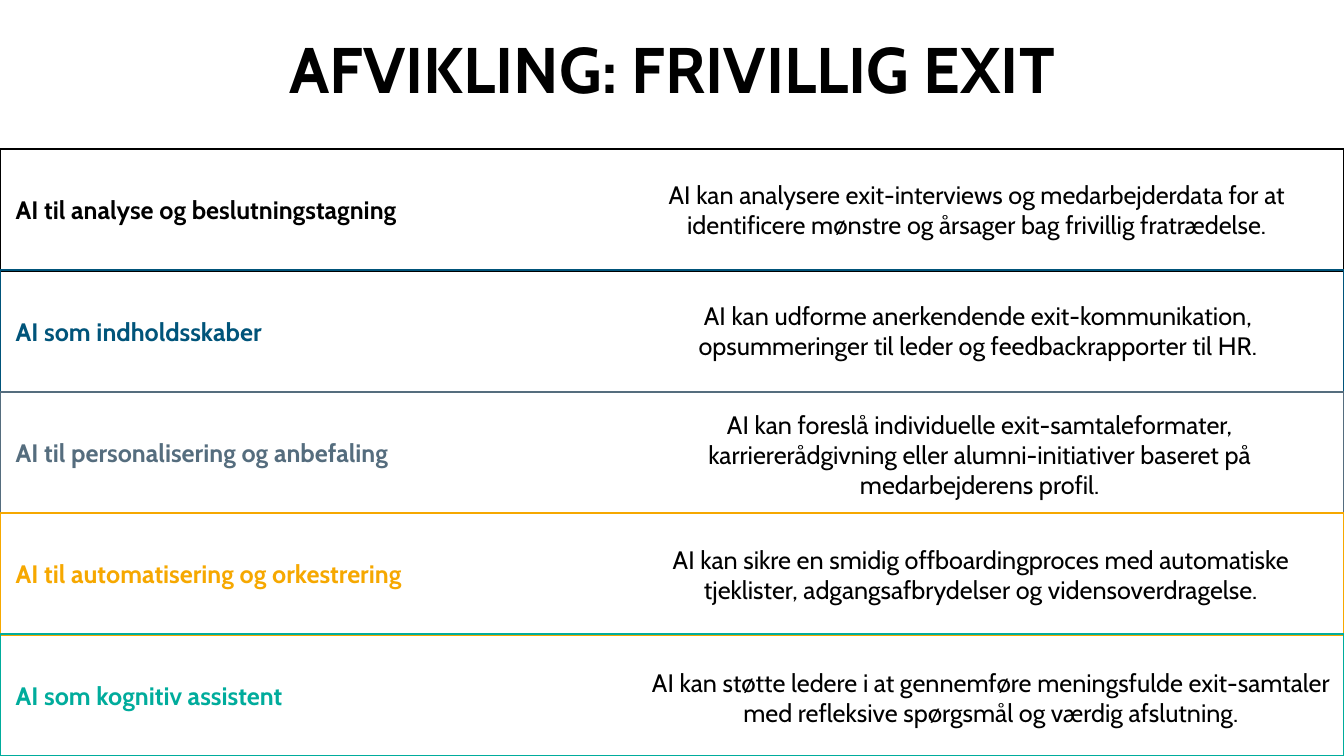
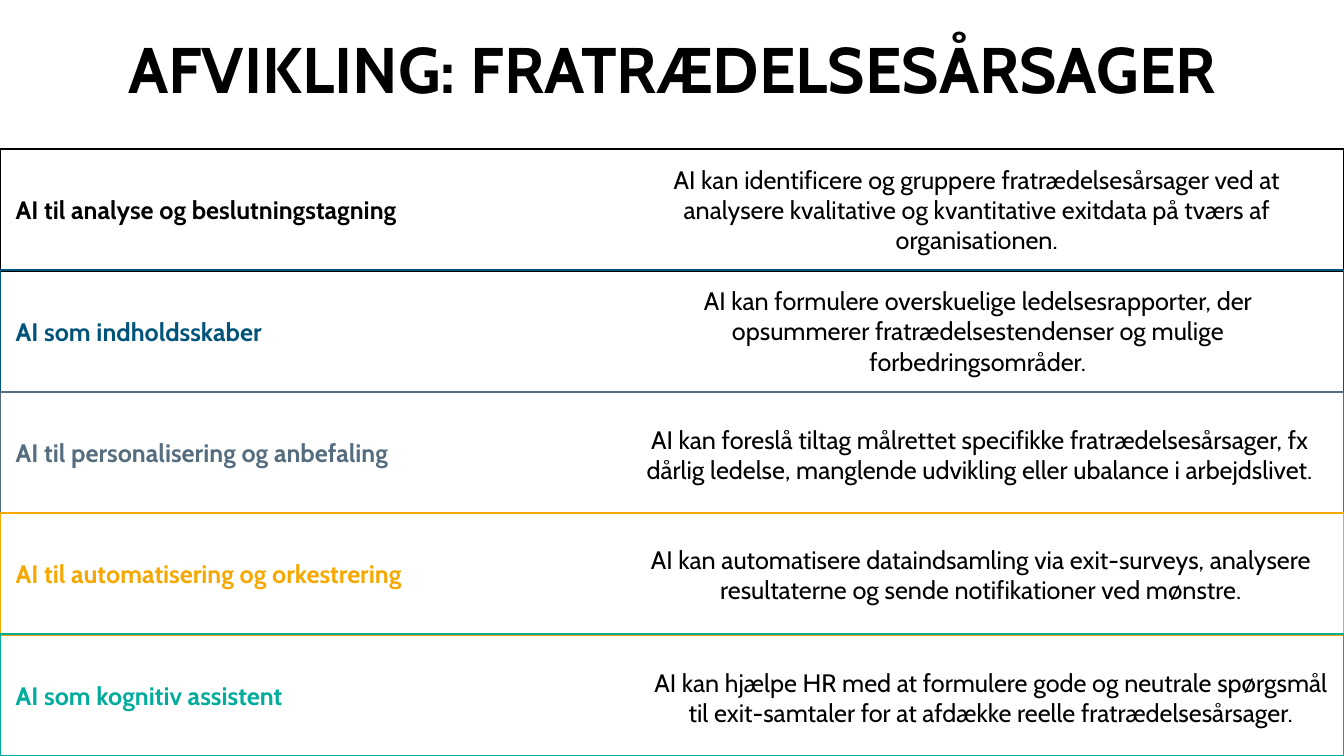
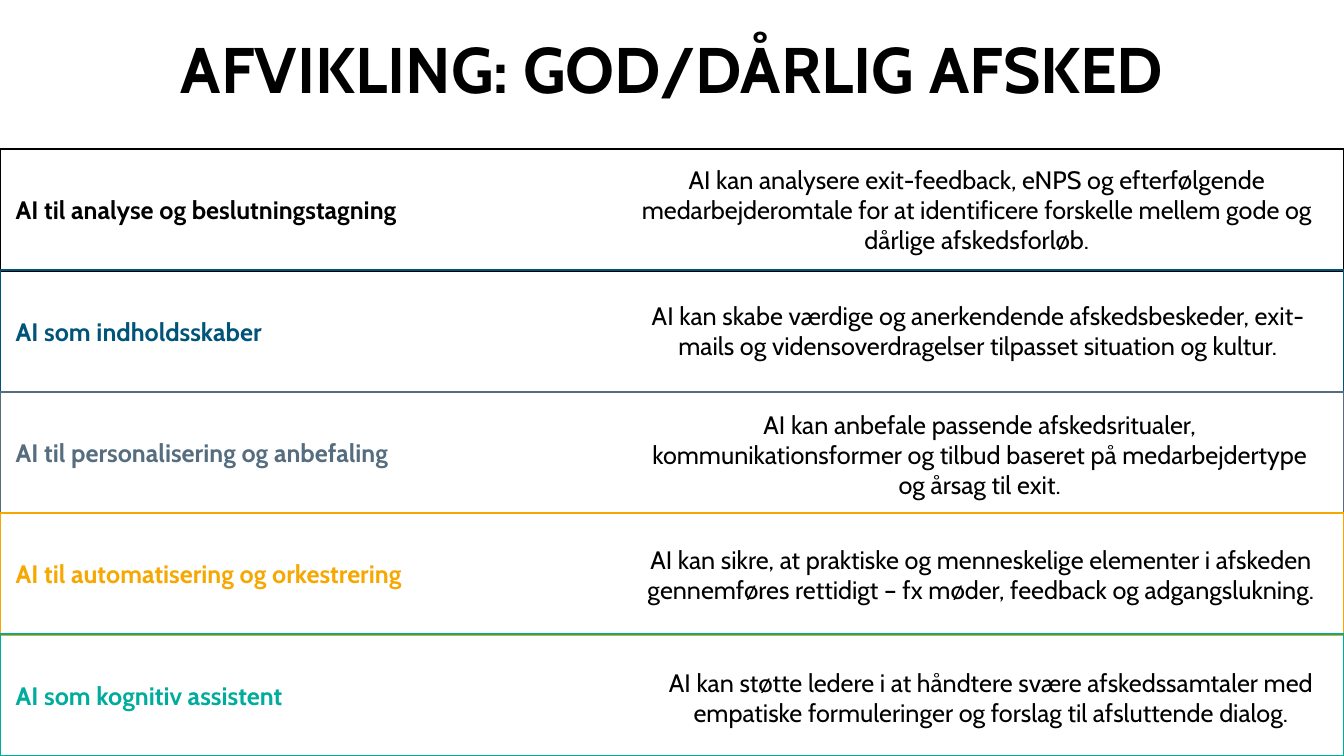
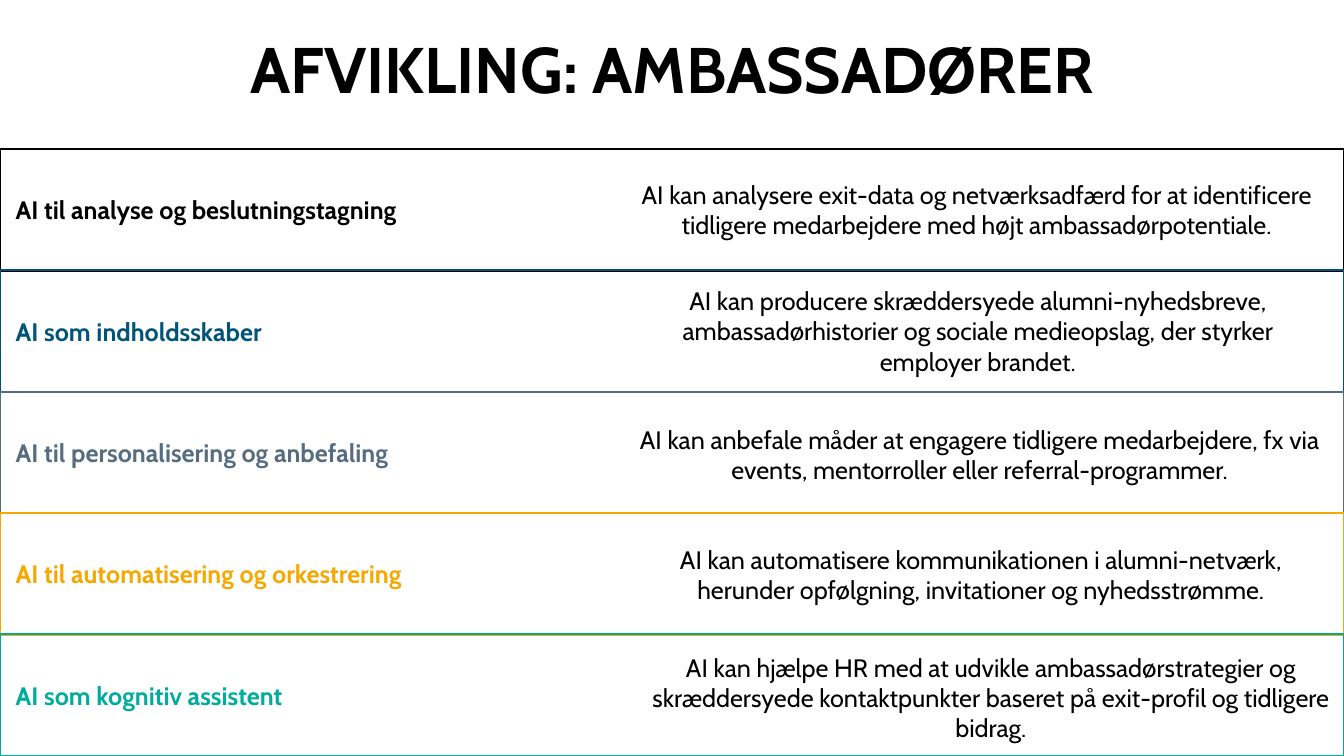
from dataclasses import dataclass

from pptx import Presentation
from pptx.dml.color import RGBColor
from pptx.enum.shapes import MSO_SHAPE
from pptx.enum.text import MSO_ANCHOR, PP_ALIGN
from pptx.shapes.base import BaseShape
from pptx.slide import Slide
from pptx.util import Pt

RECT = MSO_SHAPE.RECTANGLE
MIDDLE = MSO_ANCHOR.MIDDLE
LEFT, CENTER = PP_ALIGN.LEFT, PP_ALIGN.CENTER
BLANK = 6


@dataclass(frozen=True)
class Theme:
    font: str = "Cabin"
    ink: str = "000000"
    blue: str = "00547A"
    slate: str = "556D7E"
    amber: str = "F6A800"
    teal: str = "00AC9C"
    title: float = 46
    body: float = 18
    line: float = 1.5


@dataclass(frozen=True)
class Box:
    x: float
    y: float
    w: float
    h: float


@dataclass(frozen=True)
class Band:
    label: str
    color: str
    left: float  # left edge of the note
    drop: float  # how far the note sits below the band's top


@dataclass(frozen=True)
class Page:
    title: str
    notes: tuple[str, ...]


THEME = Theme()

# Page grid, in points
WIDE, HIGH = 960, 540
TOP, STEP, TALL = 106.4, 86.65, 87
HEAD = Box(0, 0, WIDE, 96.5)
NOTE_W, NOTE_H = 504, 86.4
PAD, INDENT = 7.2, 11.2

BANDS = (
    Band("AI til analyse og beslutningstagning", THEME.ink, 445.7, 0),
    Band("AI som indholdsskaber", THEME.blue, 446.5, 0),
    Band("AI til personalisering og anbefaling", THEME.slate, 447.8, 1.8),
    Band("AI til automatisering og orkestrering", THEME.amber, 448.6, 0.9),
    Band("AI som kognitiv assistent", THEME.teal, 455.8, 2),
)

PAGES = (
    Page("AFVIKLING: FRIVILLIG EXIT", (
        "AI kan analysere exit-interviews og medarbejderdata for at identificere mønstre og årsager bag frivillig fratrædelse.",
        "AI kan udforme anerkendende exit-kommunikation, opsummeringer til leder og feedbackrapporter til HR.",
        "AI kan foreslå individuelle exit-samtaleformater, karriererådgivning eller alumni-initiativer baseret på medarbejderens profil.",
        "AI kan sikre en smidig offboardingproces med automatiske tjeklister, adgangsafbrydelser og vidensoverdragelse.",
        "AI kan støtte ledere i at gennemføre meningsfulde exit-samtaler med refleksive spørgsmål og værdig afslutning.",
    )),
    Page("AFVIKLING: FRATRÆDELSESÅRSAGER", (
        "AI kan identificere og gruppere fratrædelsesårsager ved at analysere kvalitative og kvantitative exitdata på tværs af organisationen.",
        "AI kan formulere overskuelige ledelsesrapporter, der opsummerer fratrædelsestendenser og mulige forbedringsområder.",
        "AI kan foreslå tiltag målrettet specifikke fratrædelsesårsager, fx dårlig ledelse, manglende udvikling eller ubalance i arbejdslivet.",
        "AI kan automatisere dataindsamling via exit-surveys, analysere resultaterne og sende notifikationer ved mønstre.",
        "AI kan hjælpe HR med at formulere gode og neutrale spørgsmål til exit-samtaler for at afdække reelle fratrædelsesårsager.",
    )),
    Page("AFVIKLING: GOD/DÅRLIG AFSKED", (
        "AI kan analysere exit-feedback, eNPS og efterfølgende medarbejderomtale for at identificere forskelle mellem gode og dårlige afskedsforløb.",
        "AI kan skabe værdige og anerkendende afskedsbeskeder, exit-mails og vidensoverdragelser tilpasset situation og kultur.",
        "AI kan anbefale passende afskedsritualer, kommunikationsformer og tilbud baseret på medarbejdertype og årsag til exit.",
        "AI kan sikre, at praktiske og menneskelige elementer i afskeden gennemføres rettidigt – fx møder, feedback og adgangslukning.",
        "AI kan støtte ledere i at håndtere svære afskedssamtaler med empatiske formuleringer og forslag til afsluttende dialog.",
    )),
    Page("AFVIKLING: AMBASSADØRER", (
        "AI kan analysere exit-data og netværksadfærd for at identificere tidligere medarbejdere med højt ambassadørpotentiale.",
        "AI kan producere skræddersyede alumni-nyhedsbreve, ambassadørhistorier og sociale medieopslag, der styrker employer brandet.",
        "AI kan anbefale måder at engagere tidligere medarbejdere, fx via events, mentorroller eller referral-programmer.",
        "AI kan automatisere kommunikationen i alumni-netværk, herunder opfølgning, invitationer og nyhedsstrømme.",
        "AI kan hjælpe HR med at udvikle ambassadørstrategier og skræddersyede kontaktpunkter baseret på exit-profil og tidligere bidrag.",
    )),
)


def place(box: Box) -> tuple[Pt, Pt, Pt, Pt]:
    return Pt(box.x), Pt(box.y), Pt(box.w), Pt(box.h)


def write(shape: BaseShape, text: str, size: float, color: str,
          bold: bool, align: PP_ALIGN, pad: float = PAD) -> None:
    frame = shape.text_frame
    frame.word_wrap = True
    frame.vertical_anchor = MIDDLE
    frame.margin_left = Pt(pad)
    para = frame.paragraphs[0]
    para.text = text
    para.alignment = align
    font = para.font
    font.name, font.size, font.bold = THEME.font, Pt(size), bold
    font.color.rgb = RGBColor.from_string(color)


def add_text(slide: Slide, box: Box, text: str, size: float,
             bold: bool = False) -> None:
    shape = slide.shapes.add_textbox(*place(box))
    write(shape, text, size, THEME.ink, bold, CENTER)


def add_bands(slide: Slide) -> None:
    group = slide.shapes.add_group_shape()
    for row, band in enumerate(BANDS):
        box = Box(0, TOP + row * STEP, WIDE, TALL)
        shape = group.shapes.add_shape(RECT, *place(box))
        shape.shadow.inherit = False
        shape.fill.background()
        shape.line.color.rgb = RGBColor.from_string(band.color)
        shape.line.width = Pt(THEME.line)
        write(shape, band.label, THEME.body, band.color, True, LEFT, INDENT)


def add_page(slide: Slide, page: Page) -> None:
    add_bands(slide)
    add_text(slide, HEAD, page.title, THEME.title, bold=True)
    for row, (band, note) in enumerate(zip(BANDS, page.notes)):
        top = TOP + row * STEP + band.drop
        add_text(slide, Box(band.left, top, NOTE_W, NOTE_H), note, THEME.body)


def main() -> None:
    deck = Presentation()
    deck.slide_width, deck.slide_height = Pt(WIDE), Pt(HIGH)
    for page in PAGES:
        add_page(deck.slides.add_slide(deck.slide_layouts[BLANK]), page)
    deck.save("out.pptx")


if __name__ == "__main__":
    main()
